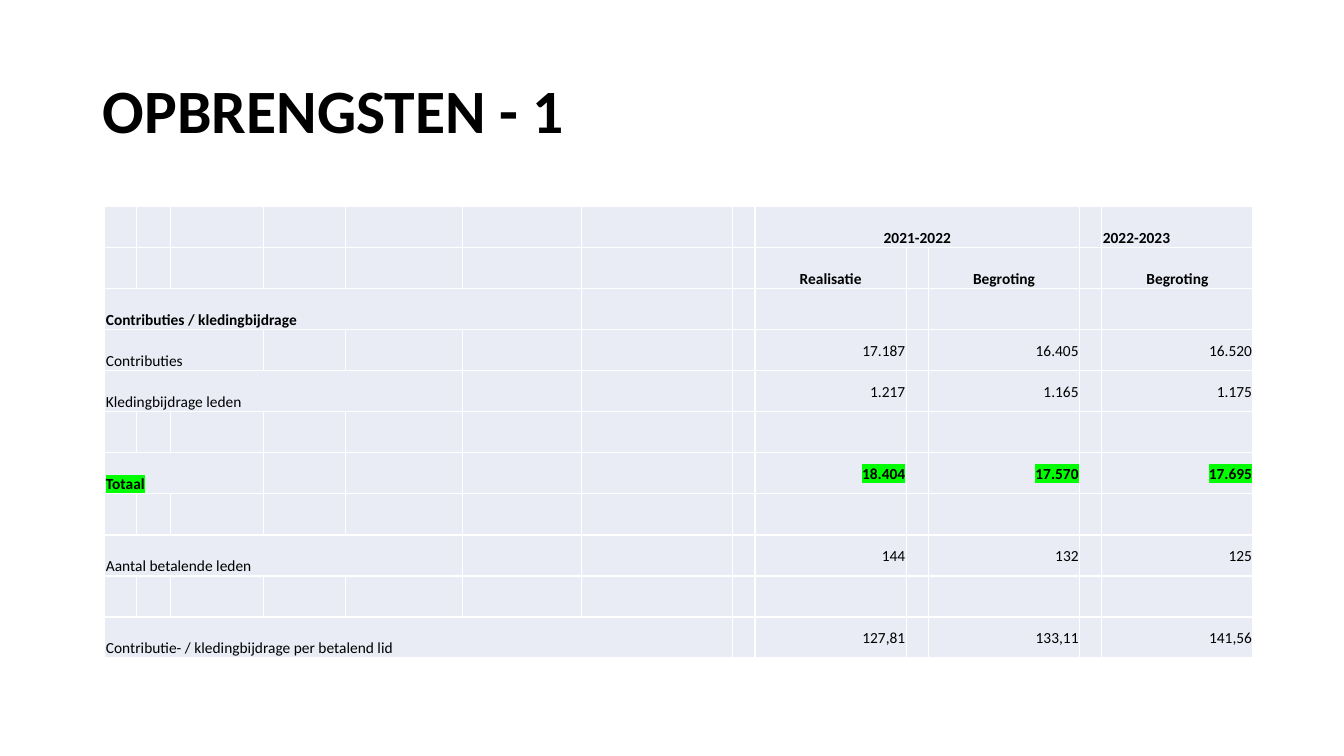
from lxml import etree
from pptx import Presentation
from pptx import util as u
from pptx.dml import color
from pptx.enum import text
from pptx.oxml import ns

ALIGN = text.PP_ALIGN
ANCHOR = text.MSO_ANCHOR


def rgb(value):
    return color.RGBColor.from_string(value)


def write(frame, content, size=11, bold=False, align=ALIGN.LEFT, highlight=None):
    para = frame.paragraphs[0]
    para.alignment = align
    span = para.add_run()
    span.text = content
    span.font.size = u.Pt(size)
    span.font.bold = bold
    span.font.color.rgb = rgb("000000")
    if highlight:
        mark = etree.SubElement(span.font._element, ns.qn("a:highlight"))
        etree.SubElement(mark, ns.qn("a:srgbClr"), val=highlight)
    span.font.name = "Calibri"
    return para


deck = Presentation()
deck.slide_width = u.Inches(13.33)
deck.slide_height = u.Inches(7.5)
page = deck.slides.add_slide(deck.slide_layouts[5])

title = page.shapes.title
title.left, title.top = u.Inches(0.92), u.Inches(0.4)
title.width, title.height = u.Inches(11.5), u.Inches(1.45)
title.text_frame.vertical_anchor = ANCHOR.MIDDLE
heading = write(title.text_frame, "OPBRENGSTEN - 1", size=44, bold=True)
heading.line_spacing = 0.9

widths = [0.31, 0.34, 0.92, 0.82, 1.16, 1.18] + [1.5, 0.22] * 3 + [1.5]
row_count = 11
frame = page.shapes.add_table(
    row_count, len(widths), u.Inches(1.04), u.Inches(2.05), u.Inches(11.38), u.Inches(4.48)
)
table = frame.table
table.first_row = False
table.horz_banding = False
for column, width in zip(table.columns, widths):
    column.width = u.Inches(width)
for row in table.rows:
    row.height = u.Inches(4.48 / row_count)

for cell in table.iter_cells():
    cell.margin_left = cell.margin_right = cell.margin_top = u.Inches(0.01)
    cell.margin_bottom = 0
    cell.vertical_anchor = ANCHOR.BOTTOM
    properties = cell._tc.get_or_add_tcPr()
    for side in ("lnL", "lnR", "lnT", "lnB"):
        border = etree.SubElement(properties, ns.qn(f"a:{side}"), w=str(u.Pt(1)))
        paint = etree.SubElement(border, ns.qn("a:solidFill"))
        etree.SubElement(paint, ns.qn("a:srgbClr"), val="FFFFFF")
    cell.fill.solid()
    cell.fill.fore_color.rgb = rgb("E9EBF5")

value_columns = (8, 10, 12)

table.cell(0, 8).merge(table.cell(0, 10))
write(table.cell(0, 8).text_frame, "2021-2022", bold=True, align=ALIGN.CENTER)
write(table.cell(0, 12).text_frame, "2022-2023", bold=True)
for column, label in zip(value_columns, ("Realisatie", "Begroting", "Begroting")):
    write(table.cell(1, column).text_frame, label, bold=True, align=ALIGN.CENTER)

entries = [
    (2, 6, "Contributies / kledingbijdrage", (), True, None),
    (3, 3, "Contributies", ("17.187", "16.405", "16.520"), False, None),
    (4, 5, "Kledingbijdrage leden", ("1.217", "1.165", "1.175"), False, None),
    (6, 3, "Totaal", ("18.404", "17.570", "17.695"), True, "00FF00"),
    (8, 5, "Aantal betalende leden", ("144", "132", "125"), False, None),
    (10, 7, "Contributie- / kledingbijdrage per betalend lid",
     ("127,81", "133,11", "141,56"), False, None),
]
for row, width, label, values, bold, highlight in entries:
    table.cell(row, 0).merge(table.cell(row, width - 1))
    write(table.cell(row, 0).text_frame, label, bold=bold, highlight=highlight)
    for column, value in zip(value_columns, values):
        cell = table.cell(row, column)
        cell.vertical_anchor = ANCHOR.MIDDLE
        write(cell.text_frame, value, bold=bold, align=ALIGN.RIGHT, highlight=highlight)

deck.save("out.pptx")
